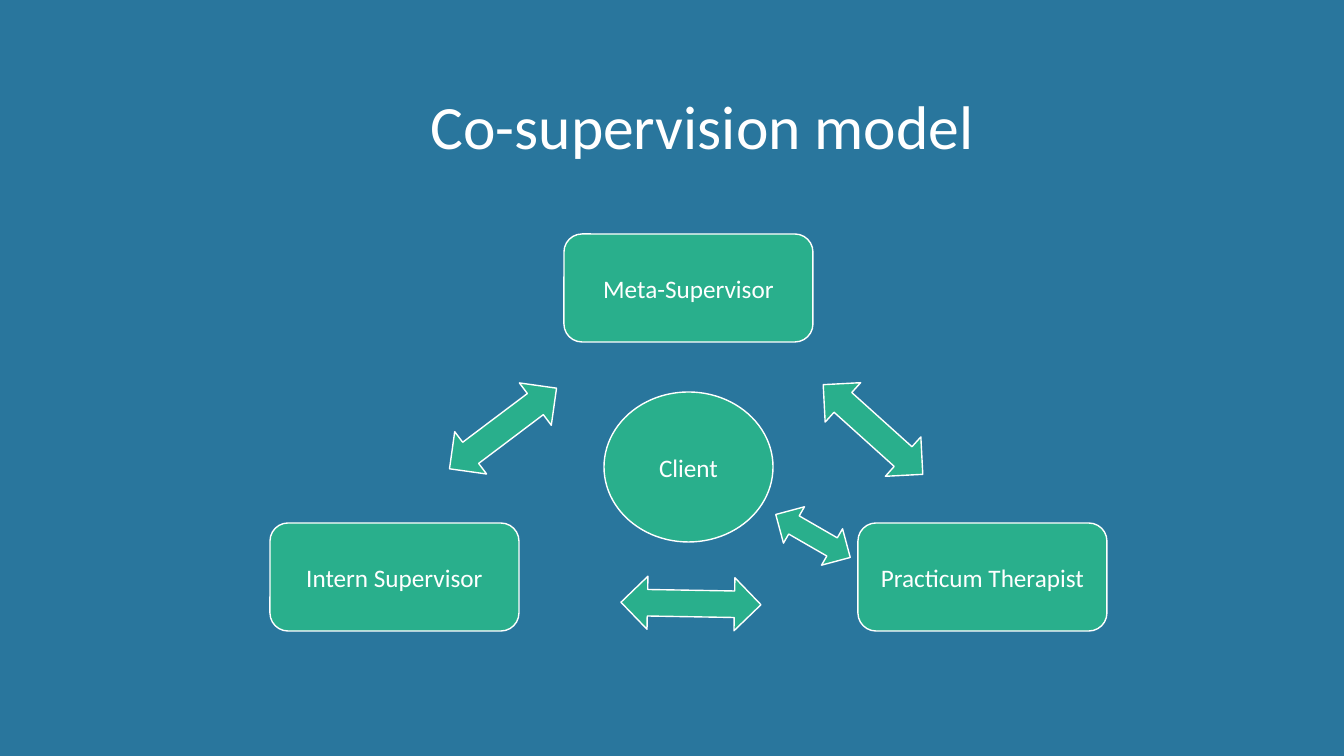
import pptx
import pptx.util
import pptx.dml.color
import pptx.enum.shapes
import pptx.enum.text

KIND = pptx.enum.shapes.MSO_SHAPE
BLUE, GREEN, WHITE = "29769D", "29AF8C", "FFFFFF"


def px(n):
    return pptx.util.Emu(round(n * 914400 / 100.8))


def paint(fill, tint):
    fill.solid()
    fill.fore_color.rgb = pptx.dml.color.RGBColor.from_string(tint)


def write(shape, text, size=18, tint=WHITE, face="Calibri", lead=1.0):
    frame = shape.text_frame
    frame.word_wrap = True
    frame.vertical_anchor = pptx.enum.text.MSO_ANCHOR.MIDDLE
    para = frame.paragraphs[0]
    para.alignment = pptx.enum.text.PP_ALIGN.CENTER
    para.line_spacing = lead
    run = para.add_run()
    run.text = text
    run.font.size = pptx.util.Pt(size)
    run.font.name = face
    paint(run.font.fill, tint)


def draw(slide, kind, left, top, width, height, turn=0):
    shape = slide.shapes.add_shape(kind, px(left), px(top), px(width), px(height))
    shape.shadow.inherit = False
    shape.rotation = turn
    paint(shape.fill, GREEN)
    paint(shape.line.fill, WHITE)
    shape.line.width = pptx.util.Pt(1)
    return shape


def node(slide, kind, text, left, top, width, height):
    write(draw(slide, kind, left, top, width, height), text)


def arrow(slide, left, top, width, height, turn):
    draw(slide, KIND.LEFT_RIGHT_ARROW, left, top, width, height, turn)


def title(slide, text):
    box = slide.shapes.add_textbox(px(123), px(57), px(1159), px(146))
    write(box, text, size=44, lead=0.9)


def main():
    deck = pptx.Presentation()
    deck.slide_width, deck.slide_height = px(1344), px(756)
    slide = deck.slides.add_slide(deck.slide_layouts[6])
    paint(slide.background.fill, BLUE)

    roles = [("Intern Supervisor", 523), ("Meta-Supervisor", 234),
             ("Practicum Therapist", 523)]
    for i, (role, top) in enumerate(roles):
        node(slide, KIND.ROUNDED_RECTANGLE, role, 270 + 294 * i, top, 249, 108)
    node(slide, KIND.OVAL, "Client", 604, 392, 169, 150)

    for spot in [(436, 402, 134, 53, 323), (806, 403, 134, 53, 42),
                 (621, 577, 140, 53, 1), (770, 515, 86, 42, 30)]:
        arrow(slide, *spot)
    title(slide, "Co-supervision model")
    deck.save("out.pptx")


if __name__ == "__main__":
    main()
